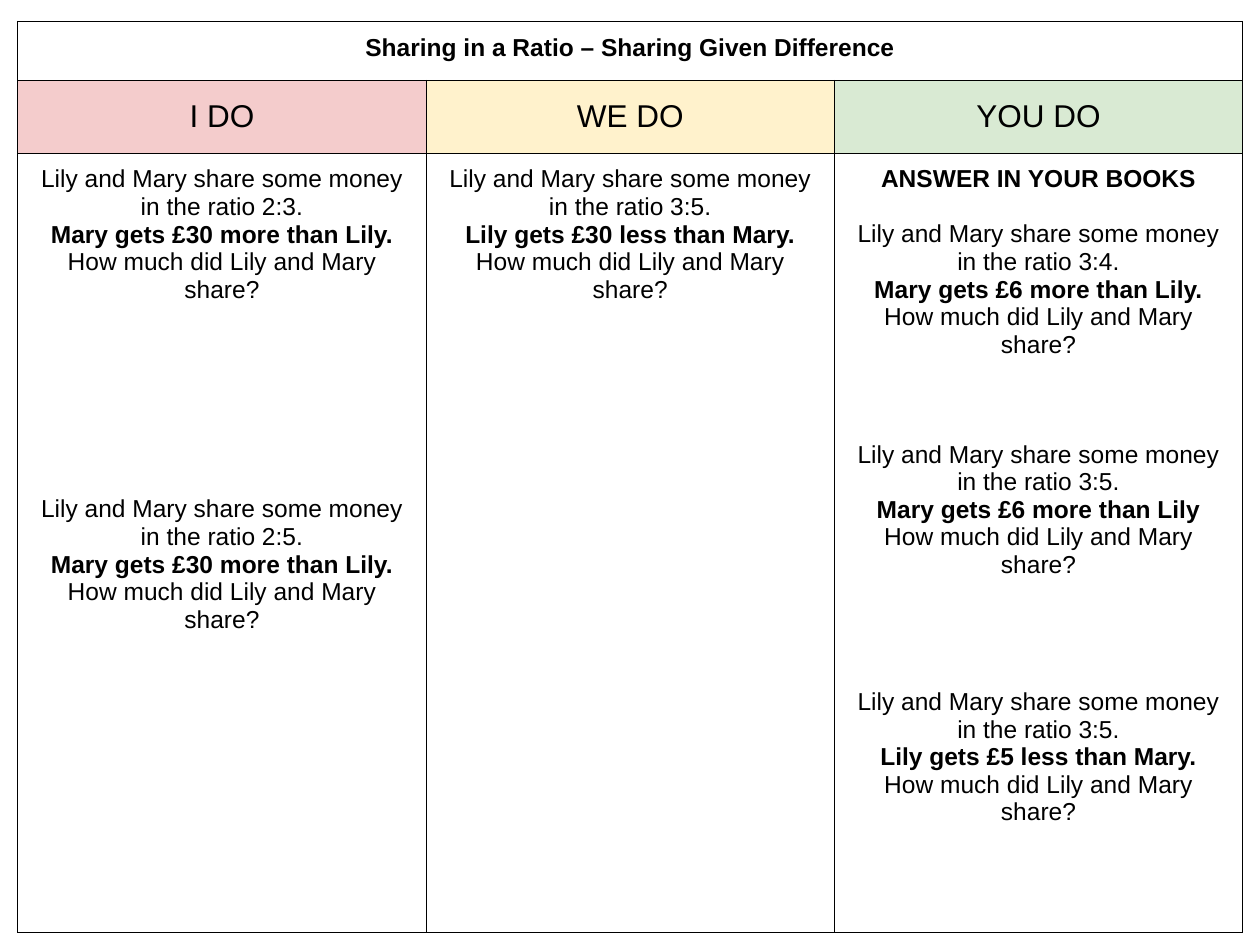
"""Build a three-column worked-example slide on sharing in a ratio."""
from dataclasses import dataclass

from lxml import etree
from pptx import Presentation
from pptx.dml.color import RGBColor
from pptx.enum.text import MSO_ANCHOR, PP_ALIGN
from pptx.oxml.ns import qn
from pptx.table import _Cell
from pptx.util import Cm, Pt

CENTER = PP_ALIGN.CENTER
TOP, MIDDLE = MSO_ANCHOR.TOP, MSO_ANCHOR.MIDDLE
COLORS = {"ink": "000000", "pink": "F4CCCC", "yellow": "FFF2CC", "green": "D9EAD3"}
FONT = "Arial"
LINE_PITCH = 15.7
COLUMN_WIDTH = Cm(8.23)
ROW_HEIGHTS = (Cm(1.19), Cm(1.47), Cm(15.7))


@dataclass(frozen=True)
class Question:
    ratio: str
    difference: str
    gap_lines: int = 0


@dataclass(frozen=True)
class Stage:
    heading: str
    color: str
    questions: tuple[Question, ...]
    instruction: str = ""


STAGES = (
    Stage("I DO", "pink", (
        Question("2:3", "Mary gets £30 more than Lily."),
        Question("2:5", "Mary gets £30 more than Lily.", 7),
    )),
    Stage("WE DO", "yellow", (
        Question("3:5", "Lily gets £30 less than Mary."),
    )),
    Stage("YOU DO", "green", (
        Question("3:4", "Mary gets £6 more than Lily.", 1),
        Question("3:5", "Mary gets £6 more than Lily", 3),
        Question("3:5", "Lily gets £5 less than Mary.", 4),
    ), "ANSWER IN YOUR BOOKS"),
)


def write(cell: _Cell, text: str, *, size: float = 14, bold: bool = False,
          gap_lines: int = 0) -> None:
    """Add one centred paragraph, using the cell's first one if it is empty."""
    frame = cell.text_frame
    paragraph = frame.add_paragraph() if frame.text else frame.paragraphs[0]
    paragraph.alignment = CENTER
    paragraph.space_before = Pt(gap_lines * LINE_PITCH)
    run = paragraph.add_run()
    run.text = text
    run.font.name = FONT
    run.font.size = Pt(size)
    run.font.bold = bold
    run.font.color.rgb = RGBColor.from_string(COLORS["ink"])


def style_cell(cell: _Cell, *, color: str = "", anchor: MSO_ANCHOR = TOP) -> None:
    """Set the fill, margins, anchor and thin borders of a cell."""
    cell.vertical_anchor = anchor
    cell.margin_left = cell.margin_right = Cm(0.25)
    cell.margin_top = cell.margin_bottom = Cm(0.25)
    if color:
        cell.fill.solid()
        cell.fill.fore_color.rgb = RGBColor.from_string(COLORS[color])
    else:
        cell.fill.background()
    properties = cell._tc.get_or_add_tcPr()
    for position, side in enumerate(("a:lnL", "a:lnR", "a:lnT", "a:lnB")):
        border = etree.Element(qn(side), w=str(Pt(0.75)))
        fill = etree.SubElement(border, qn("a:solidFill"))
        etree.SubElement(fill, qn("a:srgbClr"), val=COLORS["ink"])
        properties.insert(position, border)


def write_question(cell: _Cell, question: Question) -> None:
    """Write one ratio question with its difference in bold."""
    write(cell, f"Lily and Mary share some money in the ratio {question.ratio}.",
          gap_lines=question.gap_lines)
    write(cell, question.difference, bold=True)
    write(cell, "How much did Lily and Mary share?")


def main() -> None:
    """Create the slide and save it."""
    deck = Presentation()
    deck.slide_width, deck.slide_height = Cm(25.4), Cm(19.05)
    slide = deck.slides.add_slide(deck.slide_layouts[6])
    lesson = slide.shapes.add_table(
        len(ROW_HEIGHTS), len(STAGES), Cm(0.36), Cm(0.43),
        COLUMN_WIDTH * len(STAGES), sum(ROW_HEIGHTS)).table
    lesson.first_row = lesson.horz_banding = False
    for row, height in zip(lesson.rows, ROW_HEIGHTS):
        row.height = height

    title = lesson.cell(0, 0)
    title.merge(lesson.cell(0, len(STAGES) - 1))
    write(title, "Sharing in a Ratio – Sharing Given Difference", bold=True)

    for index, stage in enumerate(STAGES):
        lesson.columns[index].width = COLUMN_WIDTH
        top, heading, body = (lesson.cell(row, index) for row in range(3))
        style_cell(top)
        style_cell(heading, color=stage.color, anchor=MIDDLE)
        style_cell(body)
        write(heading, stage.heading, size=18)
        if stage.instruction:
            write(body, stage.instruction, bold=True)
        for question in stage.questions:
            write_question(body, question)

    deck.save("out.pptx")


if __name__ == "__main__":
    main()
